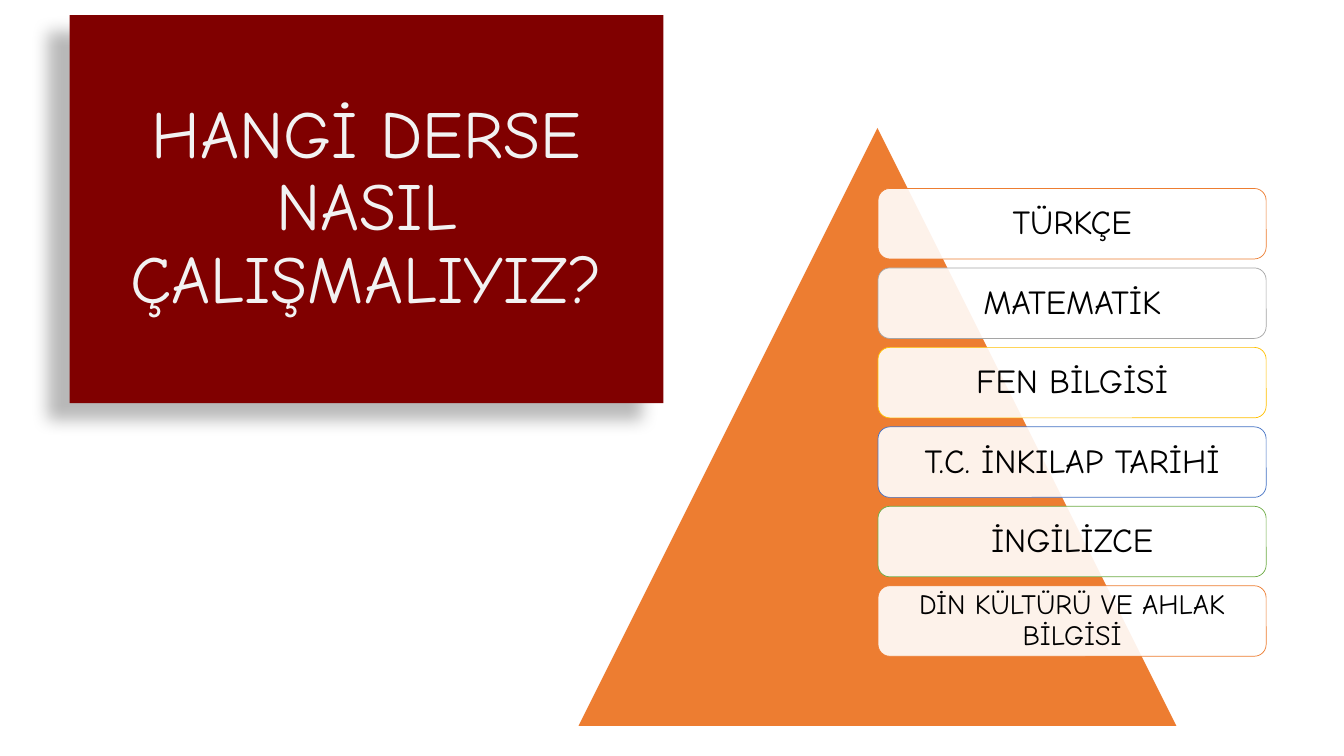
from dataclasses import dataclass

from lxml import etree
from pptx import Presentation
from pptx.dml.color import RGBColor
from pptx.enum.shapes import MSO_SHAPE
from pptx.enum.text import MSO_ANCHOR, PP_ALIGN
from pptx.oxml.ns import qn
from pptx.shapes.autoshape import Shape
from pptx.slide import Slide
from pptx.util import Inches, Pt

RECTANGLE = MSO_SHAPE.RECTANGLE
TRIANGLE = MSO_SHAPE.ISOSCELES_TRIANGLE
ROUNDED = MSO_SHAPE.ROUNDED_RECTANGLE
MIDDLE = MSO_ANCHOR.MIDDLE
CENTER = PP_ALIGN.CENTER

SLIDE_WIDTH, SLIDE_HEIGHT = Inches(13.33), Inches(7.5)
FONT = "Comic Neue"
ORANGE = "ED7D31"


@dataclass
class Area:
    """Percentages of the slide's width and height."""
    left: float
    top: float
    width: float
    height: float


@dataclass
class Subject:
    name: str
    outline: str
    size: int = 24
    margin: float = 0.1


TITLE_AREA = Area(5.18, 2, 44.18, 51.33)
PYRAMID_AREA = Area(43.05, 16.93, 44.48, 79.07)
FIRST_CARD = Area(65.33, 24.93, 28.88, 9.33)
CARD_STEP = 10.51

SUBJECTS = [
    Subject("TÜRKÇE", ORANGE),
    Subject("MATEMATİK", "A5A5A5"),
    Subject("FEN BİLGİSİ", "FFC000"),
    Subject("T.C. İNKILAP TARİHİ", "4472C4"),
    Subject("İNGİLİZCE", "70AD47"),
    Subject("DİN KÜLTÜRÜ VE AHLAK BİLGİSİ", ORANGE, 20, 0.08),
]


def color(value: str) -> RGBColor:
    return RGBColor.from_string(value)


def add_box(page: Slide, kind: MSO_SHAPE, area: Area, fill: str) -> Shape:
    box = page.shapes.add_shape(
        kind,
        round(SLIDE_WIDTH * area.left / 100),
        round(SLIDE_HEIGHT * area.top / 100),
        round(SLIDE_WIDTH * area.width / 100),
        round(SLIDE_HEIGHT * area.height / 100),
    )
    box.fill.solid()
    box.fill.fore_color.rgb = color(fill)
    box.line.fill.background()
    box.shadow.inherit = False
    return box


def write(box: Shape, text: str, size: int, ink: str) -> None:
    frame = box.text_frame
    frame.text = text
    frame.word_wrap = True
    frame.vertical_anchor = MIDDLE
    para = frame.paragraphs[0]
    para.alignment = CENTER
    para.line_spacing = 0.9
    font = para.runs[0].font
    font.name, font.size, font.color.rgb = FONT, Pt(size), color(ink)


def set_alpha(color_element: etree._Element, percent: int) -> None:
    etree.SubElement(color_element, qn("a:alpha"), val=str(percent * 1000))


def add_shadow(box: Shape) -> None:
    effects = box.element.spPr.find(qn("a:effectLst"))
    shadow = etree.SubElement(
        effects, qn("a:outerShdw"), blurRad=str(Pt(11.8)), dist=str(Pt(19.7)),
        dir=str(141 * 60000), algn="tr", rotWithShape="0")
    set_alpha(etree.SubElement(shadow, qn("a:srgbClr"), val="000000"), 28)


def add_card(page: Slide, row: int, subject: Subject) -> None:
    area = Area(FIRST_CARD.left, FIRST_CARD.top + row * CARD_STEP,
                FIRST_CARD.width, FIRST_CARD.height)
    card = add_box(page, ROUNDED, area, "FFFFFF")
    set_alpha(card.element.spPr.find(qn("a:solidFill"))[0], 90)
    card.line.color.rgb = color(subject.outline)
    card.line.width = Pt(0.5)
    write(card, subject.name, subject.size, "000000")
    frame = card.text_frame
    frame.margin_left = frame.margin_right = Inches(subject.margin)
    frame.margin_top = frame.margin_bottom = Inches(subject.margin)


def main() -> None:
    deck = Presentation()
    deck.slide_width, deck.slide_height = SLIDE_WIDTH, SLIDE_HEIGHT
    page = deck.slides.add_slide(deck.slide_layouts[6])

    # Title panel
    title = add_box(page, RECTANGLE, TITLE_AREA, "800000")
    add_shadow(title)
    write(title, "HANGİ DERSE NASIL ÇALIŞMALIYIZ?", 48, "F2F2F2")

    # Pyramid with one card per subject
    add_box(page, TRIANGLE, PYRAMID_AREA, ORANGE)
    for row, subject in enumerate(SUBJECTS):
        add_card(page, row, subject)

    deck.save("out.pptx")


if __name__ == "__main__":
    main()
